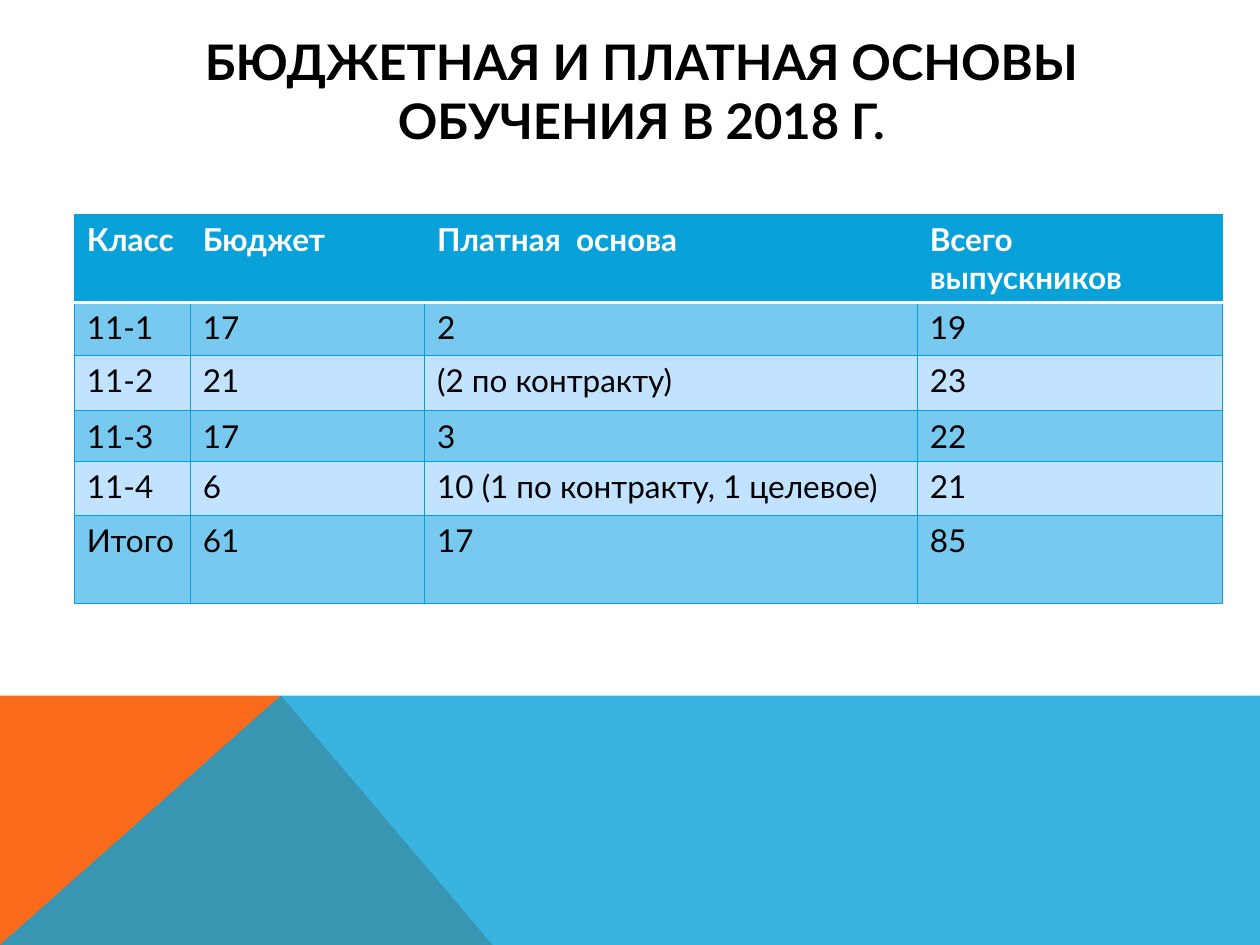
from itertools import accumulate

from lxml import etree
from pptx import Presentation
from pptx.dml.color import RGBColor
from pptx.enum import text
from pptx.oxml.ns import qn
from pptx.util import Inches, Pt

BLUE, BORDER, BAND, PALE = "08A1D9", "03A0D9", "78C9F0", "C2E3FF"
ORANGE, WHITE, BLACK = "F96A1B", "FFFFFF", "000000"

ROWS = [
    ("Класс", "Бюджет", "Платная  основа", "Всего выпускников"),
    ("11-1", "17", "2", "19"),
    ("11-2", "21", "(2 по контракту)", "23"),
    ("11-3", "17", "3", "22"),
    ("11-4", "6", "10 (1 по контракту, 1 целевое)", "21"),
    ("Итого", "61", "17", "85"),
]
COLUMN_WIDTHS = (0.92, 1.86, 3.91, 2.42)
ROW_HEIGHTS = (0.7, 0.42, 0.44, 0.4, 0.43, 0.7)


def paint(fill, color, alpha=None):
    fill.solid()
    fill.fore_color.rgb = RGBColor.from_string(color)
    if alpha is not None:
        for srgb in fill._xPr.iter(qn("a:srgbClr")):
            etree.SubElement(srgb, qn("a:alpha"), val=str(alpha * 1000))


def format_font(font, color, **values):
    for name, value in {"name": "Lato", **values}.items():
        setattr(font, name, value)
    font.color.rgb = RGBColor.from_string(color)


def add_border(cell, side, color, width):
    line = etree.SubElement(cell._tc.get_or_add_tcPr(), qn(f"a:ln{side}"),
                            w=str(Pt(width)))
    solid = etree.SubElement(line, qn("a:solidFill"))
    etree.SubElement(solid, qn("a:srgbClr"), val=color)


def add_polygon(slide, points, color, alpha=None):
    start, *rest = [(Inches(x), Inches(y)) for x, y in points]
    builder = slide.shapes.build_freeform(*start)
    builder.add_line_segments(rest, close=True)
    polygon = builder.convert_to_shape()
    polygon.shadow.inherit = False
    polygon.line.fill.background()
    paint(polygon.fill, color, alpha)


def add_footer_art(slide, left, top, width, height):
    right, bottom = left + width, top + height
    peak = (left + 2.23, top)
    add_polygon(slide, [(left, bottom), (left, top), peak,
                        (left + 3.91, bottom)], ORANGE)
    add_polygon(slide, [(left, bottom), peak, (right, top),
                        (right, bottom)], BLUE, alpha=80)


def set_title(slide, left, top, width, height):
    title = slide.shapes.title
    box = {"left": left, "top": top, "width": width, "height": height}
    for name, value in box.items():
        setattr(title, name, Inches(value))
    frame = title.text_frame
    frame.text = "БЮДЖЕТНАЯ И ПЛАТНАЯ ОСНОВЫ ОБУЧЕНИЯ В 2018 Г."
    frame.word_wrap = True
    frame.auto_size = text.MSO_AUTO_SIZE.NONE
    frame.vertical_anchor = text.MSO_ANCHOR.MIDDLE
    heading = frame.paragraphs[0]
    heading.alignment = text.PP_ALIGN.CENTER
    format_font(heading.runs[0].font, BLACK, size=Pt(28), bold=True)


def add_class_table(slide, left, top):
    table = slide.shapes.add_table(
        len(ROWS), len(COLUMN_WIDTHS), Inches(left), Inches(top),
        Inches(sum(COLUMN_WIDTHS)), Inches(sum(ROW_HEIGHTS))).table
    for column, width in zip(table.columns, COLUMN_WIDTHS):
        column.width = Inches(width)
    for row, height in zip(table.rows, ROW_HEIGHTS):
        row.height = Inches(height)

    for r, values in enumerate(ROWS):
        header = r == 0
        # White rule between the header and the first class
        white_side = {0: "B", 1: "T"}.get(r)
        for c, value in enumerate(values):
            cell = table.cell(r, c)
            cell.text = value
            format_font(cell.text_frame.paragraphs[0].runs[0].font,
                        WHITE if header else BLACK, size=Pt(18), bold=header)
            for side in "LRTB":
                rule = (WHITE, 2) if side == white_side else (BORDER, 0.75)
                add_border(cell, side, *rule)
            paint(cell.fill, BLUE if header else BAND if r % 2 else PALE)


def main():
    deck = Presentation()
    deck.slide_width, deck.slide_height = Inches(10), Inches(7.5)
    slide = deck.slides.add_slide(deck.slide_layouts[5])
    paint(slide.background.fill, WHITE)
    add_footer_art(slide, 0, 5.52, 10, 1.98)
    set_title(slide, 0.59, 0.13, 9, 1.17)
    add_class_table(slide, 0.59, 1.7)
    deck.save("out.pptx")


if __name__ == "__main__":
    main()
